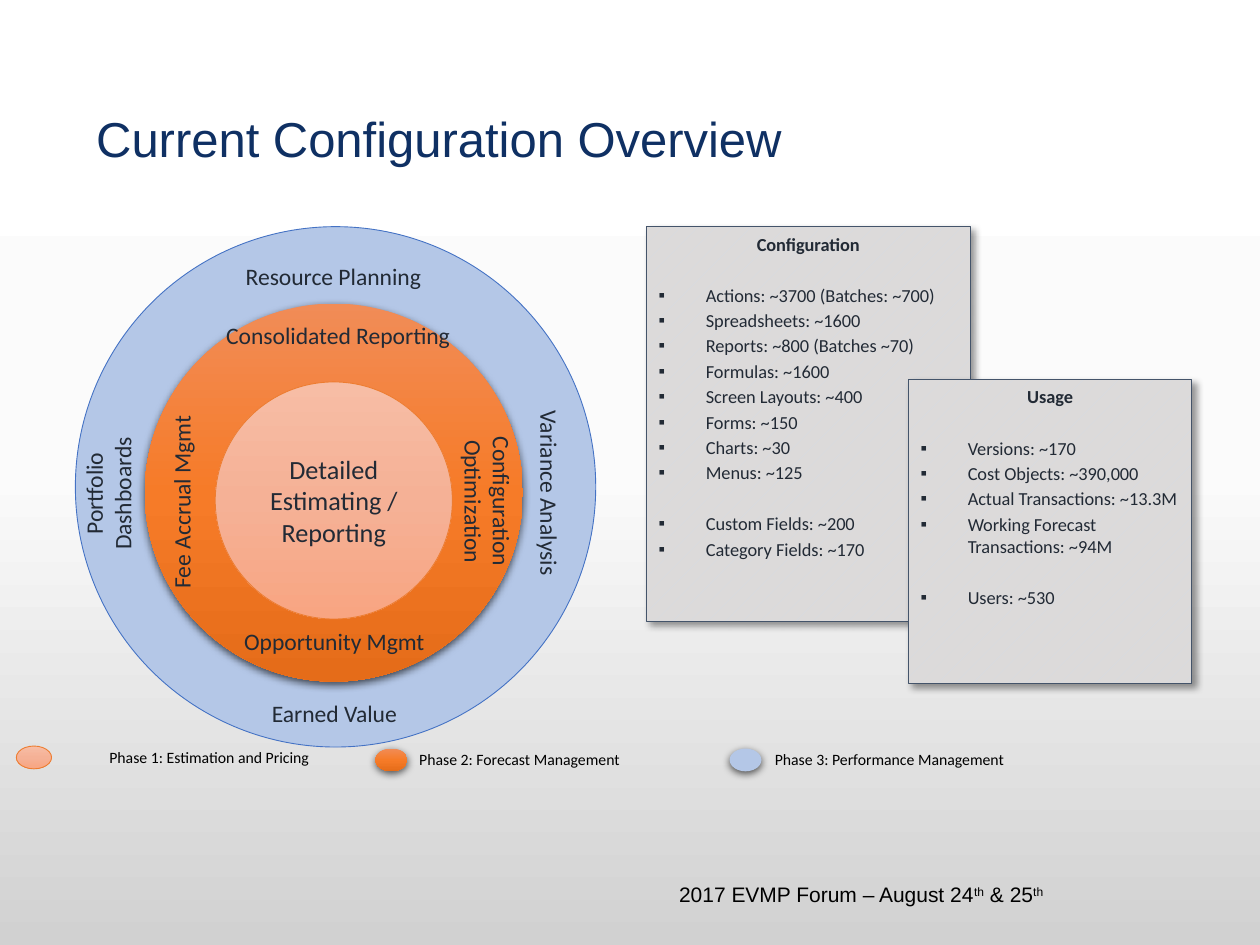
from copy import deepcopy

from lxml.etree import SubElement
from pptx import Presentation
from pptx.dml.color import RGBColor
from pptx.enum.dml import MSO_PATTERN
from pptx.enum.shapes import MSO_SHAPE as Shape
from pptx.enum.text import MSO_ANCHOR as Anchor, PP_ALIGN as Align
from pptx.oxml.ns import qn
from pptx.util import Cm, Pt

NAVY = RGBColor(0x0F, 0x30, 0x63)
INK = RGBColor(0x22, 0x2A, 0x35)
BLACK = RGBColor(0, 0, 0)
SLATE = RGBColor(0x44, 0x54, 0x6A)
PANEL = RGBColor(0xDC, 0xDA, 0xDA)
PANEL_DOTS = RGBColor(0xD6, 0xDC, 0xE5)
BLUE = RGBColor(0xB4, 0xC7, 0xE7)
BLUE_EDGE = RGBColor(0x44, 0x72, 0xC4)
PEACH_EDGE = RGBColor(0xED, 0x7D, 0x31)
ORANGE = [RGBColor(0xF1, 0x8C, 0x57), RGBColor(0xF6, 0x7B, 0x28), RGBColor(0xE5, 0x6C, 0x19)]
PEACH = [RGBColor(0xF7, 0xBD, 0xA5), RGBColor(0xF5, 0xB1, 0x96), RGBColor(0xF8, 0xA5, 0x82)]
BACKDROP = [RGBColor(0xFF, 0xFF, 0xFF), RGBColor(0xFB, 0xFB, 0xFB), RGBColor(0xD1, 0xD1, 0xD1)]

RING_SHADOW = (63, 4.5, 1.5, 90)
PANEL_SHADOW = (40, 4, 3, 45)


def set_gradient(fill, owner, colors):
    """Fill from top to bottom with three evenly spaced colours."""
    fill.gradient()
    fill.gradient_angle = 270
    stops = next(owner.iter(qn("a:gsLst")))
    stops.append(deepcopy(stops[0]))
    for stop, color, position in zip(fill.gradient_stops, colors, (0, 0.5, 1)):
        stop.color.rgb = color
        stop.position = position


def set_shadow(shape, opacity, blur, distance, angle):
    effects = shape._element.spPr.find(qn("a:effectLst"))
    outer = SubElement(effects, qn("a:outerShdw"), blurRad=str(Pt(blur)),
                       dist=str(Pt(distance)), dir=str(angle * 60000), rotWithShape="0")
    color = SubElement(outer, qn("a:srgbClr"), val="000000")
    SubElement(color, qn("a:alpha"), val=str(opacity * 1000))


def add_plain_shape(page, kind, left, top, width, height, edge=None, shadow=None):
    shape = page.shapes.add_shape(kind, Cm(left), Cm(top), Cm(width), Cm(height))
    shape.shadow.inherit = False
    if edge is None:
        shape.line.fill.background()
    else:
        shape.line.color.rgb = edge
        shape.line.width = Pt(0.5)
    if shadow:
        set_shadow(shape, *shadow)
    return shape


def add_disc(page, left, top, width, height, paint, edge=None, shadow=None):
    """Add an ellipse; paint is one colour or a list of gradient colours."""
    disc = add_plain_shape(page, Shape.OVAL, left, top, width, height, edge, shadow)
    if isinstance(paint, list):
        set_gradient(disc.fill, disc._element, paint)
    else:
        disc.fill.solid()
        disc.fill.fore_color.rgb = paint
    return disc


def style(para, size, color, name="Calibri", align=Align.LEFT, bold=False):
    para.alignment = align
    font = para.font
    font.name, font.size, font.bold = name, Pt(size), bold
    font.color.rgb = color


def add_text(page, left, top, width, height, text, size, color, name="Calibri",
             align=Align.LEFT, anchor=Anchor.TOP, rotation=0):
    box = page.shapes.add_textbox(Cm(left), Cm(top), Cm(width), Cm(height))
    box.rotation = rotation
    frame = box.text_frame
    frame.word_wrap = True
    frame.vertical_anchor = anchor
    para = frame.paragraphs[0]
    para.text = text
    style(para, size, color, name, align)
    return box


def add_title(page, left, top, width, height):
    title = add_text(page, left, top, width, height, "Current Configuration Overview",
                     28, NAVY, "Arial", anchor=Anchor.MIDDLE)
    title.text_frame.margin_left = Cm(0.19)
    title.text_frame.paragraphs[0].line_spacing = 0.9


def add_rings(page, left, top, size):
    add_disc(page, left, top, size, size, BLUE, BLUE_EDGE)
    add_disc(page, left + 1.4, top + 1.55, 7.62, 7.62, ORANGE, shadow=RING_SHADOW)
    core = add_disc(page, left + 2.82, top + 3.13, 4.78, 4.78, PEACH, PEACH_EDGE)
    core.text_frame.vertical_anchor = Anchor.MIDDLE
    para = core.text_frame.paragraphs[0]
    para.text = "Detailed Estimating / Reporting"
    style(para, 15, INK, align=Align.CENTER)

    labels = [
        ("Consolidated Reporting", 2.77, 1.78, 5.05, 0.84, 0),
        ("Opportunity Mgmt", 2.31, 7.95, 5.82, 0.84, 0),
        ("Fee Accrual Mgmt", 0.1, 5.13, 4.09, 0.84, 270),
        ("Configuration Optimization", 6.12, 4.83, 4.37, 1.42, 90),
        ("Earned Value", 2.31, 9.4, 5.82, 0.84, 0),
        ("Resource Planning", 2.29, 0.58, 5.82, 0.84, 0),
        ("Portfolio Dashboards", -1.52, 4.67, 4.37, 1.42, 270),
        ("Variance Analysis", 7.37, 4.95, 4.37, 0.84, 90),
    ]
    for text, x, y, width, height, rotation in labels:
        add_text(page, left + x, top + y, width, height, text, 13.5, INK,
                 align=Align.CENTER, rotation=rotation)


def add_legend(page, left, top):
    add_disc(page, left, top + 0.1, 0.71, 0.46, PEACH, PEACH_EDGE)
    for x, paint in ((7.24, ORANGE), (14.38, BLUE)):
        add_disc(page, left + x, top + 0.15, 0.64, 0.46, paint, shadow=RING_SHADOW)
    captions = [
        ("Phase 1: Estimation and Pricing", 0.53, 0, 6.71, Align.CENTER),
        ("Phase 2: Forecast Management", 7.87, 0.05, 6.53, Align.LEFT),
        ("Phase 3: Performance Management", 15.04, 0.05, 9.04, Align.LEFT),
    ]
    for text, x, y, width, align in captions:
        add_text(page, left + x, top + y, width, 0.64, text, 9, BLACK,
                 align=align, anchor=Anchor.MIDDLE)


def add_panel(page, left, top, width, height, heading, groups):
    """Add a card with a heading and groups of bullets, a line apart."""
    panel = add_plain_shape(page, Shape.RECTANGLE, left, top, width, height, SLATE, PANEL_SHADOW)
    panel.fill.patterned()
    panel.fill.pattern = MSO_PATTERN.PERCENT_5
    panel.fill.fore_color.rgb = PANEL_DOTS
    panel.fill.back_color.rgb = PANEL
    frame = panel.text_frame
    frame.vertical_anchor = Anchor.TOP
    frame.paragraphs[0].text = heading
    style(frame.paragraphs[0], 10.5, INK, align=Align.CENTER, bold=True)
    for group in groups:
        for index, item in enumerate(group):
            para = frame.add_paragraph()
            para.text = item
            para.space_before = Pt(1.9 if index else 16.6)
            props = para._p.get_or_add_pPr()
            props.set("marL", str(Cm(0.95)))
            props.set("indent", str(-Cm(0.95)))
            SubElement(props, qn("a:buFont"), typeface="Arial")
            SubElement(props, qn("a:buChar"), char="▪")
            style(para, 10.5, INK)


def add_footer(page, left, top, width, height):
    box = add_text(page, left, top, width, height, "2017 EVMP Forum – August 24", 12, BLACK, "Arial")
    para = box.text_frame.paragraphs[0]
    for text, raised in (("th", True), (" & 25", False), ("th", True)):
        span = para.add_run()
        span.text = text
        if raised:
            span._r.get_or_add_rPr().set("baseline", "30000")


def main():
    deck = Presentation()
    deck.slide_width, deck.slide_height = Cm(25.4), Cm(19.05)
    page = deck.slides.add_slide(deck.slide_layouts[6])
    set_gradient(page.background.fill, page._element, BACKDROP)
    add_title(page, 1.75, 1.02, 21.89, 3.68)
    add_rings(page, 1.52, 4.57, 10.49)
    add_legend(page, 0.33, 14.94)
    add_panel(page, 13.03, 4.57, 6.53, 7.95, "Configuration", [
        ["Actions: ~3700 (Batches: ~700)", "Spreadsheets: ~1600", "Reports: ~800 (Batches ~70)",
         "Formulas: ~1600", "Screen Layouts: ~400", "Forms: ~150", "Charts: ~30", "Menus: ~125"],
        ["Custom Fields: ~200", "Category Fields: ~170"],
    ])
    add_panel(page, 18.31, 7.65, 5.72, 6.12, "Usage", [
        ["Versions: ~170", "Cost Objects: ~390,000", "Actual Transactions: ~13.3M",
         "Working Forecast Transactions: ~94M"],
        ["Users: ~530"],
    ])
    add_footer(page, 13.44, 17.65, 8.36, 1.02)
    deck.save("out.pptx")


if __name__ == "__main__":
    main()
